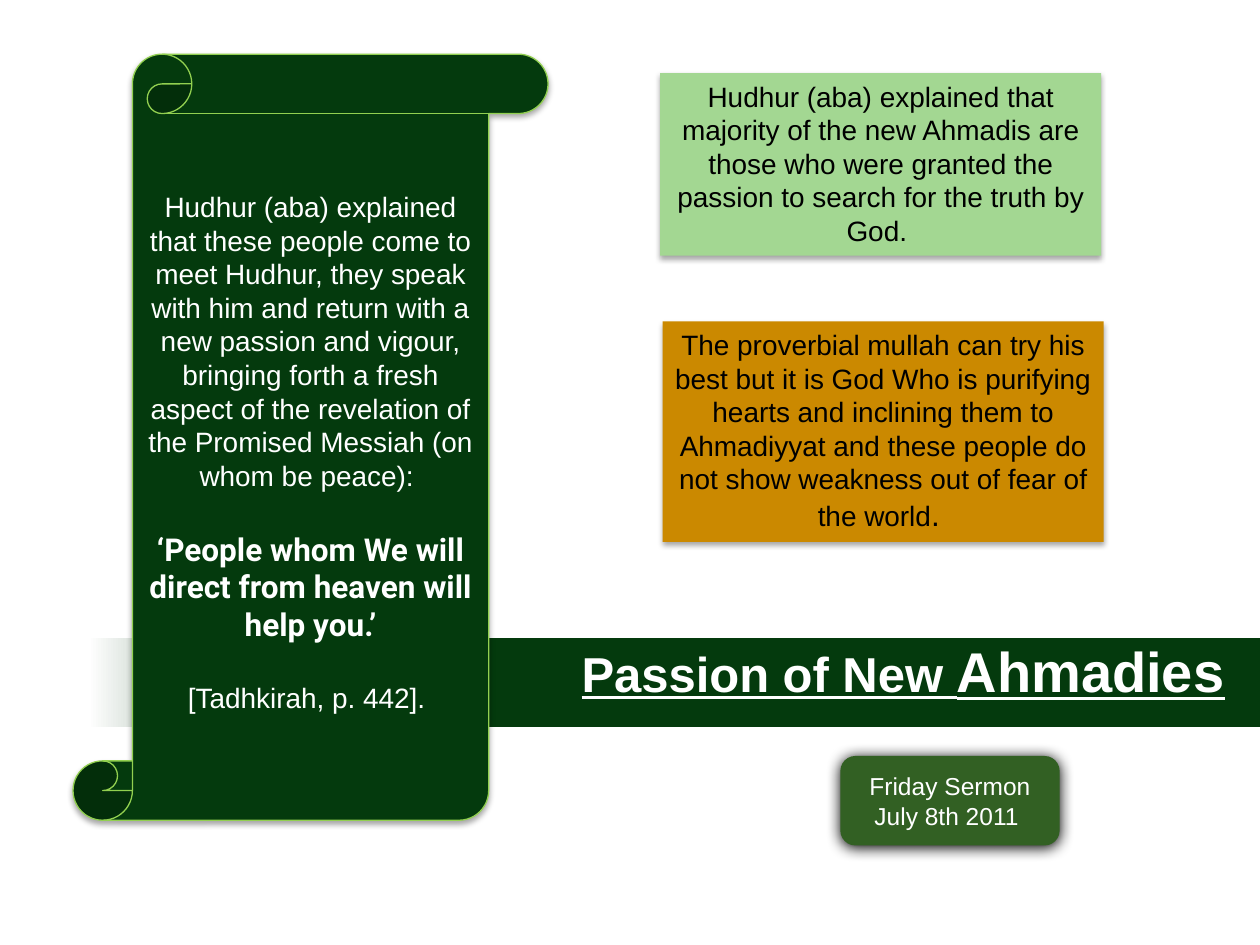
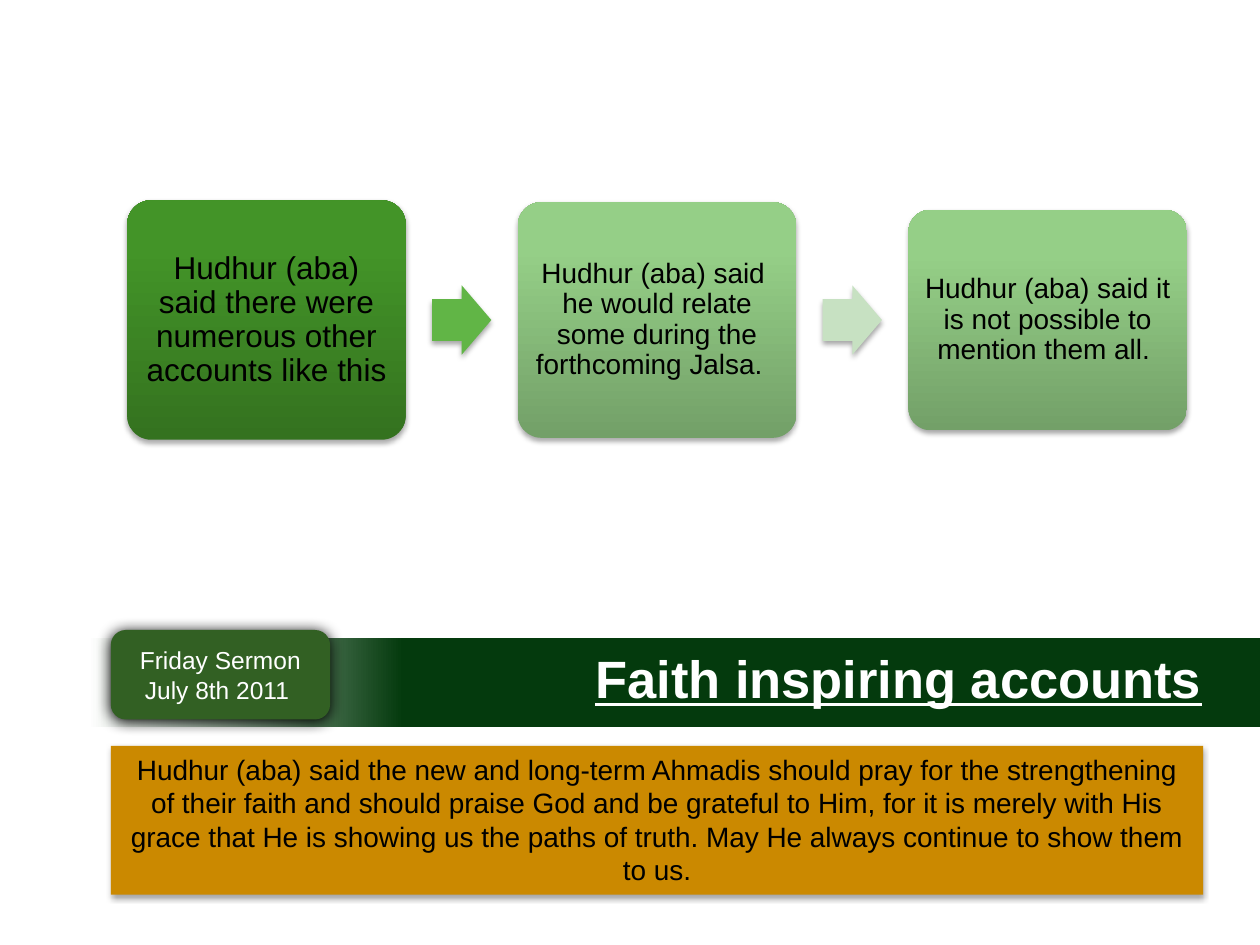
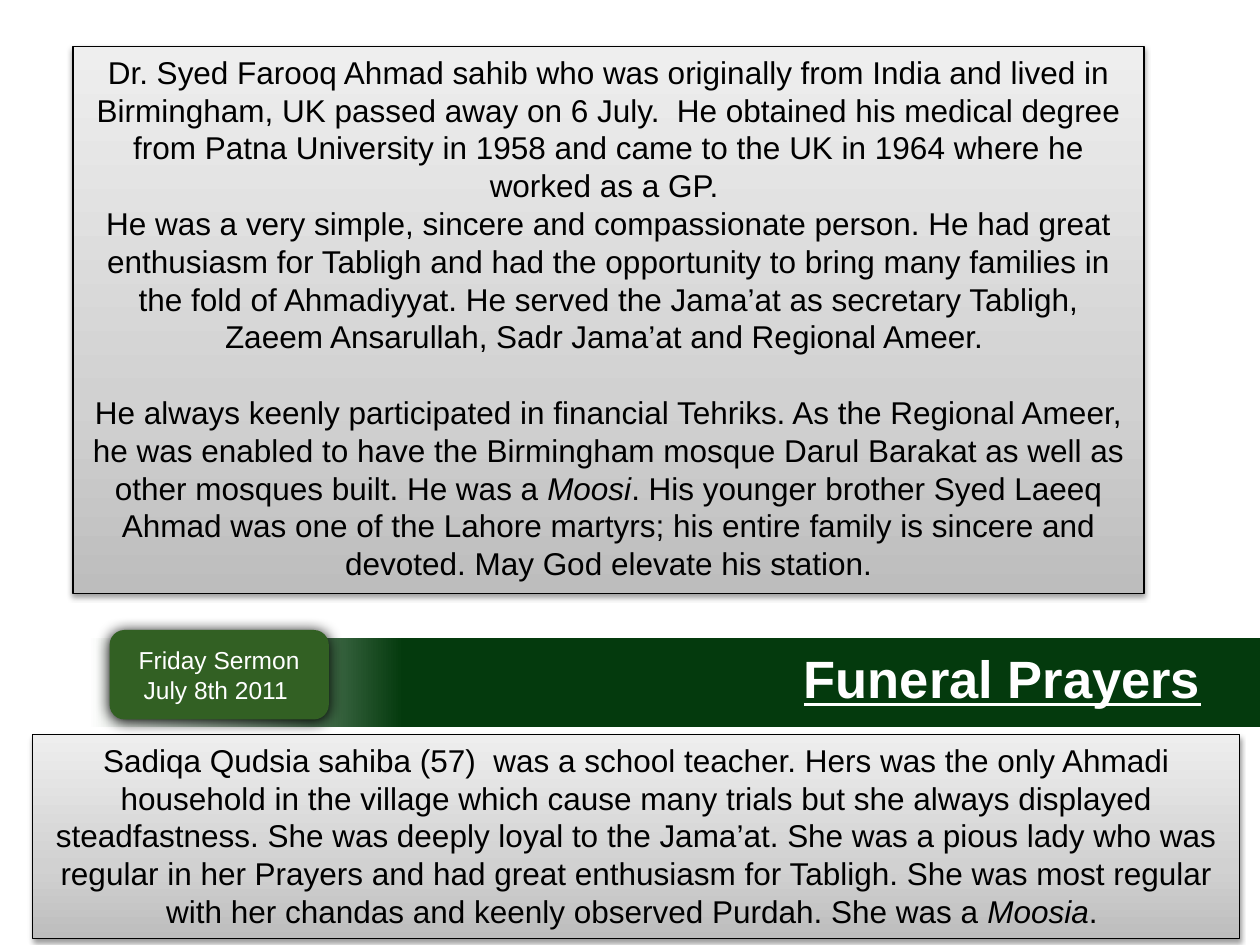
from lxml import etree
from pptx import Presentation
from pptx.dml.color import RGBColor
from pptx.enum.shapes import MSO_SHAPE
from pptx.enum.text import MSO_ANCHOR, MSO_AUTO_SIZE, PP_ALIGN
from pptx.oxml.ns import qn
from pptx.util import Inches, Pt

RECTANGLE = MSO_SHAPE.RECTANGLE
ROUNDED = MSO_SHAPE.ROUNDED_RECTANGLE
SCROLL = MSO_SHAPE.VERTICAL_SCROLL
ARROW = MSO_SHAPE.RIGHT_ARROW
TOP, MIDDLE = MSO_ANCHOR.TOP, MSO_ANCHOR.MIDDLE
CENTER, RIGHT = PP_ALIGN.CENTER, PP_ALIGN.RIGHT
FIXED_SIZE = MSO_AUTO_SIZE.NONE

WIDTH, HEIGHT = 10, 7.5
TITLE_ONLY = 5
BLANK_LINE = 21.6
COLORS = {
    "white": "FFFFFF", "black": "000000", "band": "043A0D", "lime": "92D050",
    "mint": "A3D792", "amber": "CB8900", "badge": "326023",
    "arrow": "61B546", "pale arrow": "C7E1C2",
}
GRADIENTS = {
    "band": (0, [(7, "FFFFFF"), (32, "043A0D")]),
    "green": (90, [(0, "34721F"), (80, "439428"), (100, "429726")]),
    "pale": (90, [(0, "73A068"), (80, "95CF87"), (100, "95D286")]),
    "gray": (90, [(0, "BDBDBD"), (35, "D1D1D1"), (100, "EEEEEE")]),
}
SHADOWS = {
    "soft": (35, 3.1, 1.8),
    "panel": (38, 3.1, 1.6),
    "glow": (100, 8.5, 1),
}

BADGE_TEXT = ["Friday Sermon", "July 8th 2011 "]

PASSION_TITLE = [[("Passion of New ", {"size": 28}), ("Ahmadies", {"size": 32})]]
SCROLL_TEXT = [
    "Hudhur (aba) explained that these people come to meet Hudhur, they speak with him "
    "and return with a new passion and vigour, bringing forth a fresh aspect of the "
    "revelation of the Promised Messiah (on whom be peace): ",
    [("‘People whom We will direct from heaven will help you.’",
      {"size": 18, "font": "Roboto", "bold": True})],
    "[Tadhkirah, p. 442]. ",
]
SEARCH_TEXT = [
    "Hudhur (aba) explained that majority of the new Ahmadis are those who were granted "
    "the passion to search for the truth by God. ",
]
HEARTS_TEXT = [[
    ("The proverbial mullah can try his best but it is God Who is purifying hearts and "
     "inclining them to Ahmadiyyat and these people do not show weakness out of fear of "
     "the world", {}),
    (". ", {"size": 18}),
]]

ACCOUNTS = [
    ("Hudhur (aba) said there were numerous other accounts like this ", 18, 1.9, "green"),
    ("Hudhur (aba) said  he would relate some during the forthcoming Jalsa.  ", 16, 1.87, "pale"),
    ("Hudhur (aba) said it is not possible to mention them all. ", 16, 1.75, "pale"),
]
ARROW_FILLS = ["arrow", "pale arrow"]
PRAYER_TEXT = [
    "Hudhur (aba) said the new and long-term Ahmadis should pray for the strengthening of "
    "their faith and should praise God and be grateful to Him, for it is merely with His "
    "grace that He is showing us the paths of truth. May He always continue to show them "
    "to us.",
]

DOCTOR_TEXT = [
    "Dr. Syed Farooq Ahmad sahib who was originally from India and lived in Birmingham, UK "
    "passed away on 6 July.  He obtained his medical degree from Patna University in 1958 "
    "and came to the UK in 1964 where he worked as a GP. ",
    "He was a very simple, sincere and compassionate person. He had great enthusiasm for "
    "Tabligh and had the opportunity to bring many families in the fold of Ahmadiyyat. He "
    "served the Jama’at as secretary Tabligh, Zaeem Ansarullah, Sadr Jama’at and Regional "
    "Ameer. ",
    [("He always keenly participated in financial Tehriks. As the Regional Ameer, he was "
      "enabled to have the Birmingham mosque Darul Barakat as well as other mosques built. "
      "He was a ", {}),
     ("Moosi", {"italic": True}),
     (". His younger brother Syed Laeeq Ahmad was one of the Lahore martyrs; his entire "
      "family is sincere and devoted. May God elevate his station.", {})],
]
TEACHER_TEXT = [[
    ("Sadiqa Qudsia sahiba (57)  was a school teacher. Hers was the only Ahmadi household "
     "in the village which cause many trials but she always displayed steadfastness. She "
     "was deeply loyal to the Jama’at. She was a pious lady who was regular in her Prayers "
     "and had great enthusiasm for Tabligh. She was most regular with her chandas and "
     "keenly observed Purdah. She was a ", {}),
    ("Moosia", {"italic": True}),
    (". ", {}),
]]


def color(name):
    return RGBColor.from_string(COLORS[name])


def format_run(run, size=16, font="Arial", ink="black", bold=False, italic=False,
               underline=False):
    run.font.size = Pt(size)
    run.font.name = font
    run.font.color.rgb = color(ink)
    run.font.bold = bold
    run.font.italic = italic
    run.font.underline = underline


def write_text(shape, paragraphs, align=CENTER, anchor=TOP, insets=(0.1, 0.05),
               line_spacing=None, gaps=(), **run_format):
    frame = shape.text_frame
    frame.word_wrap = True
    frame.auto_size = FIXED_SIZE
    frame.vertical_anchor = anchor
    frame.margin_left = frame.margin_right = Inches(insets[0])
    frame.margin_top = frame.margin_bottom = Inches(insets[1])
    for index, content in enumerate(paragraphs):
        paragraph = frame.add_paragraph() if index else frame.paragraphs[0]
        paragraph.alignment = align
        paragraph.line_spacing = line_spacing
        if index in gaps:
            paragraph.space_before = Pt(BLANK_LINE)
        runs = [(content, {})] if isinstance(content, str) else content
        for text, changes in runs:
            run = paragraph.add_run()
            run.text = text
            format_run(run, **{**run_format, **changes})


def paint_gradient(shape, name):
    angle, stops = GRADIENTS[name]
    shape.fill.gradient()
    shape.fill.gradient_angle = angle
    stop_list = shape.element.spPr.find(".//" + qn("a:gsLst"))
    for stop in list(stop_list):
        stop_list.remove(stop)
    for position, value in stops:
        stop = etree.SubElement(stop_list, qn("a:gs"), pos=str(position * 1000))
        etree.SubElement(stop, qn("a:srgbClr"), val=value)


def cast_shadow(shape, name):
    opacity, blur, distance = SHADOWS[name]
    effects = shape.element.spPr.find(qn("a:effectLst"))
    shadow = etree.SubElement(
        effects, qn("a:outerShdw"), blurRad=str(Pt(blur)), dist=str(Pt(distance)),
        dir="5400000", rotWithShape="0")
    ink = etree.SubElement(shadow, qn("a:srgbClr"), val=COLORS["black"])
    etree.SubElement(ink, qn("a:alpha"), val=str(opacity * 1000))


def add_box(slide, kind, box, fill=None, gradient=None, line=None, shadow="soft",
            adjustments=()):
    shape = slide.shapes.add_shape(kind, *map(Inches, box))
    for index, value in enumerate(adjustments):
        shape.adjustments[index] = value
    if gradient:
        paint_gradient(shape, gradient)
    else:
        shape.fill.solid()
        shape.fill.fore_color.rgb = color(fill)
    if line:
        shape.line.color.rgb = color(line)
        shape.line.width = Pt(0.75)
    else:
        shape.line.fill.background()
    shape.shadow.inherit = False
    if shadow:
        cast_shadow(shape, shadow)
    return shape


def add_layout_band(slide):
    band = add_box(slide, RECTANGLE, (0, 5.06, WIDTH, 0.71), gradient="band", shadow=None)
    slide.slide_layout.shapes.element.insert(2, band.element)


def add_titled_slide(presentation, title, box):
    slide = presentation.slides.add_slide(presentation.slide_layouts[TITLE_ONLY])
    holder = slide.shapes.title
    holder.left, holder.top, holder.width, holder.height = map(Inches, box)
    write_text(holder, title, align=RIGHT, insets=(0, 0.05), size=30, ink="white",
               bold=True, underline=True)
    return slide


def add_badge(slide, left, top):
    badge = add_box(slide, ROUNDED, (left, top, 1.74, 0.71), fill="badge", shadow="glow")
    write_text(badge, BADGE_TEXT, anchor=MIDDLE, size=14, ink="white")


def add_note(slide, box, fill, text):
    write_text(add_box(slide, RECTANGLE, box, fill=fill), text)


def add_panel(slide, box, text, gaps=()):
    panel = add_box(slide, RECTANGLE, box, gradient="gray", line="black", shadow="panel")
    write_text(panel, text, size=18, gaps=gaps)


def add_account_flow(slide):
    left, middle, width, pitch = 1.01, 2.54, 2.21, 3.1
    arrow_width, arrow_height = 0.47, 0.55
    for index, (text, size, height, gradient) in enumerate(ACCOUNTS):
        box = (left + index * pitch, middle - height / 2, width, height)
        tile = add_box(slide, ROUNDED, box, gradient=gradient, adjustments=[0.1])
        write_text(tile, [text], anchor=MIDDLE, insets=(0.07, 0.07), line_spacing=0.9,
                   size=size)
    for index, fill in enumerate(ARROW_FILLS):
        arrow_left = left + index * pitch + (width + pitch - arrow_width) / 2
        box = (arrow_left, middle - arrow_height / 2, arrow_width, arrow_height)
        add_box(slide, ARROW, box, fill=fill, adjustments=[0.6, 0.5])


def build_passion(presentation):
    slide = add_titled_slide(presentation, PASSION_TITLE, (2.22, 5, 7.5, 1))
    add_layout_band(slide)
    scroll = add_box(slide, SCROLL, (0.58, 0.43, 3.77, 6.08), fill="band", line="lime")
    write_text(scroll, SCROLL_TEXT, anchor=MIDDLE, ink="white", gaps=(1, 2))
    add_note(slide, (5.24, 0.58, 3.5, 1.45), "mint", SEARCH_TEXT)
    add_badge(slide, 6.67, 6)
    add_note(slide, (5.26, 2.55, 3.5, 1.75), "amber", HEARTS_TEXT)


def build_accounts(presentation):
    slide = add_titled_slide(presentation, ["Faith inspiring accounts"],
                             (0.67, 5.08, 8.87, 0.62))
    add_note(slide, (0.88, 5.92, 8.67, 1.18), "amber", PRAYER_TEXT)
    add_account_flow(slide)
    add_badge(slide, 0.88, 5)


def build_prayers(presentation):
    slide = add_titled_slide(presentation, ["Funeral Prayers"], (2.61, 5.08, 6.92, 0.62))
    add_panel(slide, (0.58, 0.37, 8.5, 4.34), DOCTOR_TEXT, gaps=(2,))
    add_panel(slide, (0.26, 5.83, 9.58, 1.62), TEACHER_TEXT)
    add_badge(slide, 0.87, 5)


def main():
    presentation = Presentation()
    presentation.slide_width = Inches(WIDTH)
    presentation.slide_height = Inches(HEIGHT)
    build_passion(presentation)
    build_accounts(presentation)
    build_prayers(presentation)
    presentation.save("out.pptx")


if __name__ == "__main__":
    main()
